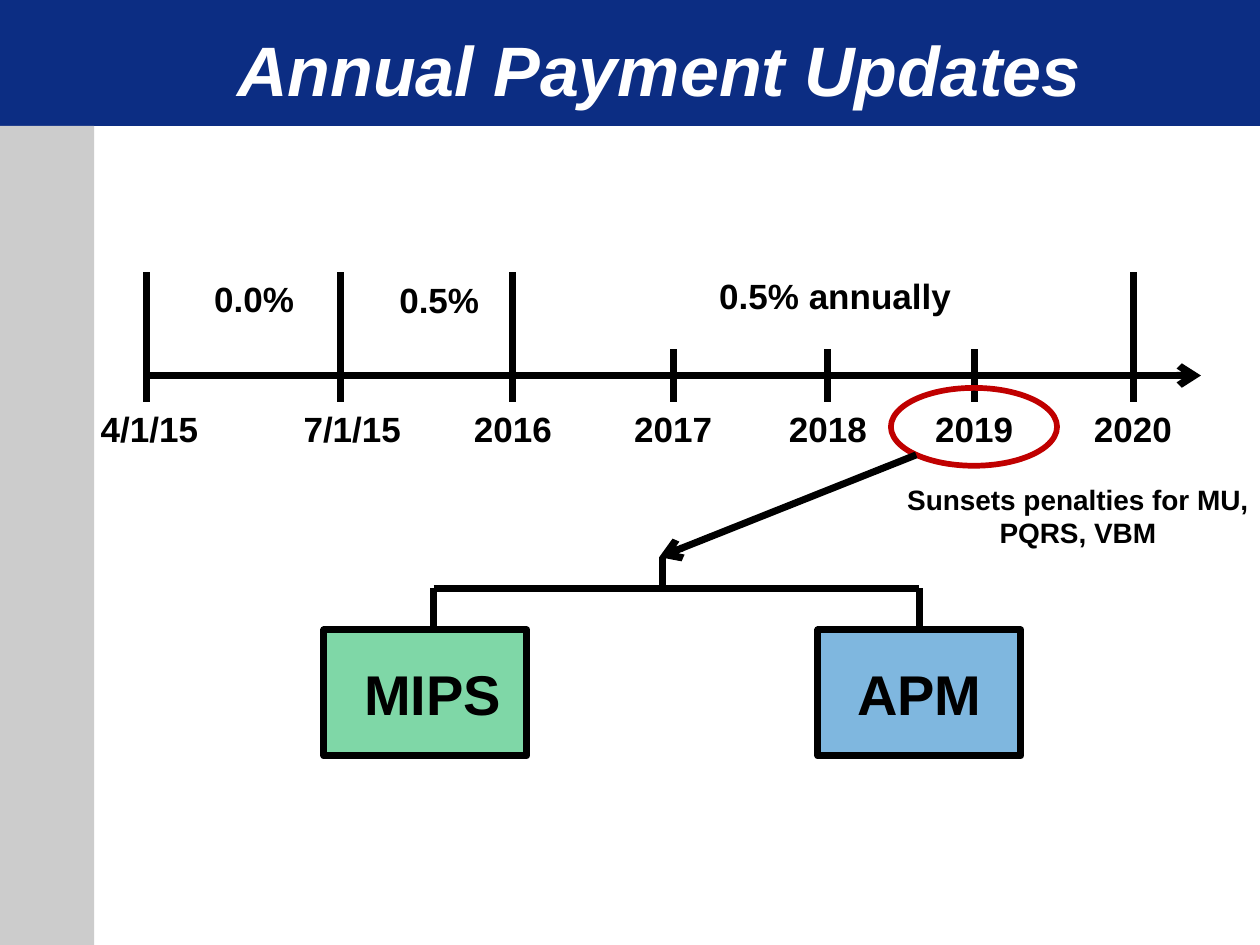
from lxml import etree
from pptx import Presentation
from pptx.dml.color import RGBColor
from pptx.enum.shapes import MSO_CONNECTOR, MSO_SHAPE
from pptx.enum.text import MSO_ANCHOR, MSO_AUTO_SIZE, PP_ALIGN
from pptx.oxml.ns import qn
from pptx.util import Cm, Pt

STRAIGHT = MSO_CONNECTOR.STRAIGHT
RECTANGLE, OVAL = MSO_SHAPE.RECTANGLE, MSO_SHAPE.OVAL
LEFT, CENTER = PP_ALIGN.LEFT, PP_ALIGN.CENTER
TOP, MIDDLE = MSO_ANCHOR.TOP, MSO_ANCHOR.MIDDLE
GROW = MSO_AUTO_SIZE.SHAPE_TO_FIT_TEXT
FONT = "Arial"
BLACK, WHITE, NAVY, GRAY, RED = "000000", "FFFFFF", "0C2D83", "CCCCCC", "C00000"
GREEN, BLUE = "00B050", "0070C0"
LINE_WIDTH = 4
TOP_SIDE = 0


def color(hex_string):
    return RGBColor.from_string(hex_string)


def write(frame, text, size=20, fill=BLACK, align=CENTER, italic=False, anchor=TOP):
    frame.word_wrap = True
    frame.vertical_anchor = anchor
    para = frame.paragraphs[0]
    para.alignment = align
    span = para.add_run()
    span.text = text
    font = span.font
    font.name, font.size, font.bold, font.italic = FONT, Pt(size), True, italic
    font.color.rgb = color(fill)


def add_label(page, text, left, top, width, height, **text_format):
    box = page.shapes.add_textbox(Cm(left), Cm(top), Cm(width), Cm(height))
    write(box.text_frame, text, **text_format)
    box.text_frame.auto_size = GROW


def add_box(page, kind, left, top, width, height, fill=None, alpha=None,
            line=None, line_width=LINE_WIDTH):
    box = page.shapes.add_shape(kind, Cm(left), Cm(top), Cm(width), Cm(height))
    box.shadow.inherit = False
    if fill:
        box.fill.solid()
        box.fill.fore_color.rgb = color(fill)
    else:
        box.fill.background()
    if alpha:
        fill_color = box._element.spPr.find(qn("a:solidFill"))[0]
        etree.SubElement(fill_color, qn("a:alpha"), val=str(alpha * 1000))
    if line:
        box.line.color.rgb = color(line)
        box.line.width = Pt(line_width)
    else:
        box.line.fill.background()
    return box


def add_line(page, x1, y1, x2, y2, arrow=False):
    line = page.shapes.add_connector(STRAIGHT, Cm(x1), Cm(y1), Cm(x2), Cm(y2))
    line.line.color.rgb = color(BLACK)
    line.line.width = Pt(LINE_WIDTH)
    properties = line._element.spPr
    if arrow:
        etree.SubElement(properties.find(qn("a:ln")), qn("a:tailEnd"), type="arrow")
    etree.SubElement(properties, qn("a:effectLst"))
    return line


def add_frame(page, width, height, header_height, sidebar_width):
    """Header band and sidebar, placed behind everything else."""
    bars = [
        add_box(page, RECTANGLE, 0, 0, width, header_height, fill=NAVY),
        add_box(page, RECTANGLE, 0, header_height, sidebar_width,
                height - header_height, fill=GRAY),
    ]
    for bar in reversed(bars):
        page.shapes._spTree.insert(2, bar._element)


def add_title(page, text, left, top, width, height):
    title = page.shapes.title
    title.left, title.top = Cm(left), Cm(top)
    title.width, title.height = Cm(width), Cm(height)
    write(title.text_frame, text, size=40, fill=WHITE, italic=True)
    title.text_frame.auto_size = GROW


def add_timeline(page, left, top, width):
    axis, tick_bottom = top + 2.16, top + 2.69
    long_tick, short_tick = top + 0.08, top + 1.63
    label_width, label_height = 2.79, 1.12

    # Axis
    add_line(page, left + 1.14, axis, left + width, axis, arrow=True)

    # Ticks and dates: text, tick position, tick top, label shift, alignment
    half = label_width / 2
    dates = [
        ("4/1/15", 1.17, long_tick, 1.17, LEFT),
        ("7/1/15", 5.08, long_tick, 0.99, LEFT),
        ("2016", 8.56, long_tick, half, CENTER),
        ("2017", 11.79, short_tick, half, CENTER),
        ("2018", 14.91, short_tick, half, CENTER),
        ("2019", 17.86, short_tick, half, CENTER),
        ("2020", 21.06, long_tick, half, CENTER),
    ]
    for text, x, tick_top, shift, align in dates:
        add_line(page, left + x, tick_top, left + x, tick_bottom)
        add_label(page, text, left + x - shift, tick_bottom,
                  label_width, label_height, align=align)

    # Rates between the long ticks
    rates = [("0.0%", 2.29, 0.05, label_width), ("0.5%", 6.02, 0.08, label_width),
             ("0.5% annually", 12.47, 0, 5.61)]
    for text, x, y, rate_width in rates:
        add_label(page, text, left + x, top + y, rate_width, label_height, align=LEFT)


def add_branches(page, left, top, width, height):
    box_width, box_height = 4.09, 2.54
    box_top = top + height - box_height
    arrow_end, bar = top + 2.06, top + 2.69
    stem = left + 6.83
    bar_left, bar_right = left + 2.21, left + width - box_width / 2

    # Arrow and bracket
    add_line(page, left + 11.94, top, left + 6.76, arrow_end, arrow=True)
    add_line(page, bar_left, bar, bar_right, bar)
    add_line(page, stem, arrow_end, stem, bar)
    add_line(page, bar_left, bar, bar_left, box_top)
    right_drop = add_line(page, bar_right, bar, bar_right, box_top)

    # Payment tracks
    tracks = [("MIPS", left, GREEN, 0.55),
              ("APM", left + width - box_width, BLUE, 0.25)]
    for text, x, fill, inset in tracks:
        box = add_box(page, RECTANGLE, x, box_top, box_width, box_height,
                      fill=fill, alpha=50, line=BLACK)
        box.text_frame.margin_left = Cm(inset)
        write(box.text_frame, text, size=32, anchor=MIDDLE)
    right_drop.end_connect(box, TOP_SIDE)


def main():
    deck = Presentation()
    deck.slide_width, deck.slide_height = Cm(25.4), Cm(19.05)
    page = deck.slides.add_slide(deck.slide_layouts[5])

    add_frame(page, 25.4, 19.05, header_height=2.54, sidebar_width=1.9)
    add_title(page, "Annual Payment Updates", 1.8, 0.41, 22.96, 1.96)
    add_timeline(page, 1.78, 5.41, 22.43)

    # Highlight on 2019 with its consequences
    add_box(page, OVAL, 17.96, 7.82, 3.35, 1.57, line=RED, line_width=3.25)
    add_branches(page, 6.53, 9.17, 14.05, 6.07)
    add_label(page, "Sunsets penalties for MU, PQRS, VBM", 17.96, 9.6, 7.54, 1.63, size=16)

    deck.save("out.pptx")


if __name__ == "__main__":
    main()
